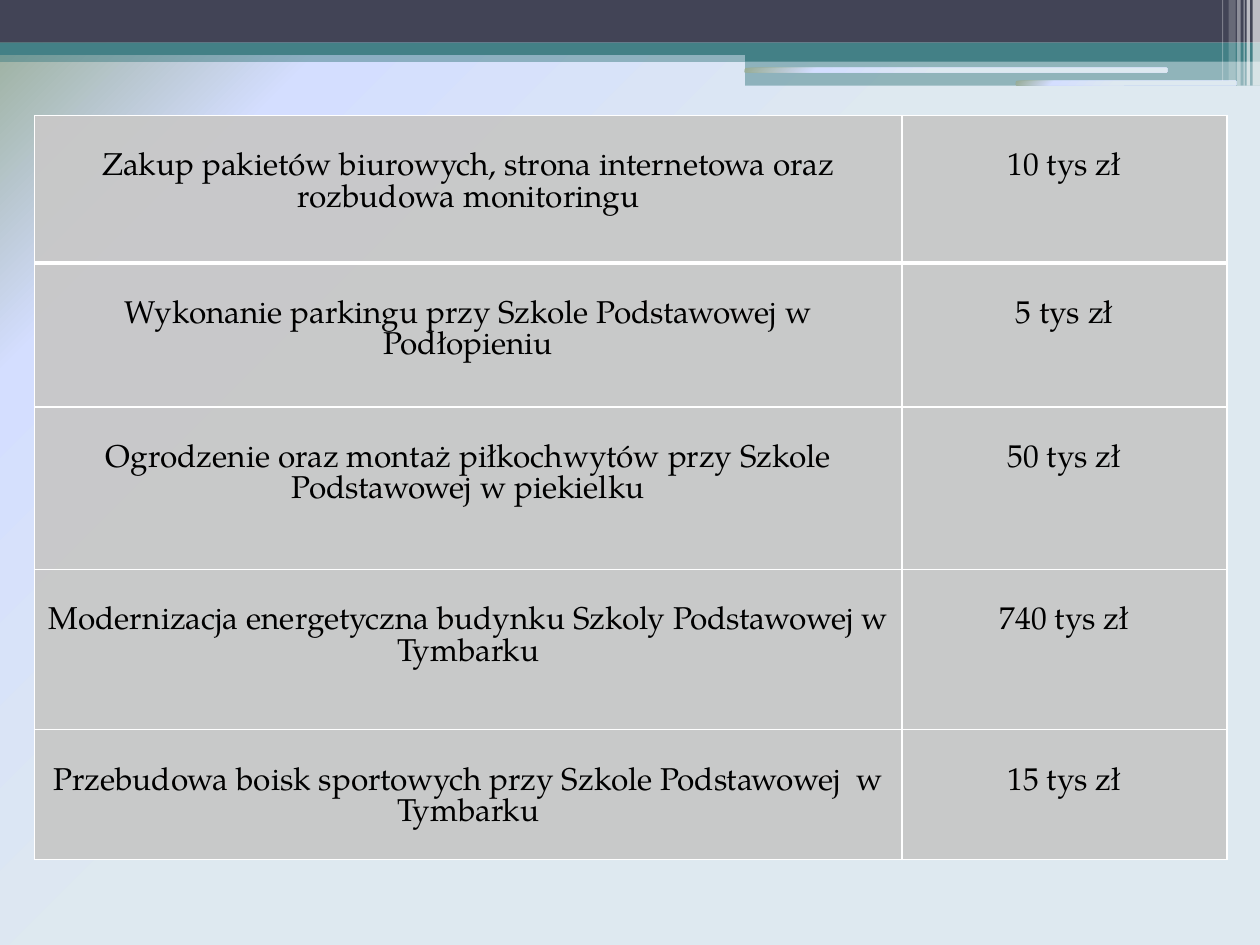
from lxml.etree import SubElement
from pptx import Presentation
from pptx.dml.color import RGBColor
from pptx.enum.shapes import MSO_SHAPE as Shape
from pptx.enum.text import PP_ALIGN as Align
from pptx.oxml import parse_xml
from pptx.oxml.ns import nsdecls, qn
from pptx.util import Cm, Pt

TEAL = RGBColor(0x43, 0x80, 0x86)
NAVY = RGBColor(0x42, 0x44, 0x56)
WHITE = RGBColor(0xFF, 0xFF, 0xFF)
GRAY = RGBColor(0xC8, 0xC8, 0xC8)
BLACK = RGBColor(0, 0, 0)
SKY = RGBColor(0xDE, 0xE9, 0xF0)
LAVENDER = RGBColor(0xD4, 0xDE, 0xFF)
SAGE = RGBColor(0x96, 0xAB, 0x94)
FONT = "TeX Gyre Pagella"

BANDS = [
    (0, 1.02, 25.4, 0.23, TEAL, 50),
    (0, 0, 25.4, 0.86, NAVY, 100),
    (0, 0.86, 25.4, 0.25, TEAL, 100),
    (15.02, 0.99, 10.38, 0.25, TEAL, 100),
    (15.02, 1.23, 10.38, 0.5, TEAL, 50),
]
GROOVES = [(15.01, 1.37, 8.52, 0.09), (20.48, 1.63, 4.44, 0.09)]
STRIPES = [
    (25.25, 0.15, 1.73, 65),
    (25.13, 0.07, 1.73, 65),
    (25.07, 0.02, 1.73, 60),
    (24.94, 0.07, 1.73, 40),
    (24.77, 0.14, 1.63, 20),
    (24.64, 0.02, 1.63, 30),
]
COLUMN_WIDTHS = [17.48, 6.55]
ROWS = [
    (2.97, "Zakup pakietów biurowych, strona internetowa oraz rozbudowa monitoringu", "10 tys zł"),
    (2.9, "Wykonanie parkingu przy Szkole Podstawowej w Podłopieniu", "5 tys zł"),
    (3.28, "Ogrodzenie oraz montaż piłkochwytów przy Szkole Podstawowej w piekielku", "50 tys zł"),
    (3.23, "Modernizacja energetyczna budynku Szkoly Podstawowej w Tymbarku", "740 tys zł"),
    (2.62, "Przebudowa boisk sportowych przy Szkole Podstawowej  w Tymbarku", "15 tys zł"),
]


def set_solid(fill, element, color, opacity):
    """Fill with one colour at the given opacity in percent."""
    fill.solid()
    fill.fore_color.rgb = color
    if opacity < 100:
        tint = element.find(".//" + qn("a:srgbClr"))
        SubElement(tint, qn("a:alpha"), val=str(opacity * 1000))


def set_gradient(fill, element):
    """Fill with the radial gradient that starts at the lower right corner."""
    fill.gradient()
    plain = element.find(".//" + qn("a:gradFill"))
    stops = "".join(
        f'<a:gs pos="{place * 1000}"><a:srgbClr val="{color}"/></a:gs>'
        for place, color in ((53, SKY), (83, LAVENDER), (100, SAGE))
    )
    radial = parse_xml(
        f'<a:gradFill {nsdecls("a")} rotWithShape="1"><a:gsLst>{stops}</a:gsLst>'
        '<a:path path="circle"><a:fillToRect l="100000" t="100000"/></a:path></a:gradFill>'
    )
    plain.getparent().replace(plain, radial)


def add_block(page, kind, left, top, width, height):
    """Add a shape without outline or shadow."""
    block = page.shapes.add_shape(kind, Cm(left), Cm(top), Cm(width), Cm(height))
    block.shadow.inherit = False
    block.line.fill.background()
    return block


def add_bar(page, left, top, width, height, color, opacity):
    """Add a plain rectangle of the header."""
    bar = add_block(page, Shape.RECTANGLE, left, top, width, height)
    set_solid(bar.fill, bar._element.spPr, color, opacity)


def add_groove(page, left, top, width, height):
    """Add a thin rounded line in the background's gradient."""
    groove = add_block(page, Shape.ROUNDED_RECTANGLE, left, top, width, height)
    set_gradient(groove.fill, groove._element.spPr)


def set_borders(cell, top, bottom):
    """Draw white borders with the given top and bottom widths in points."""
    properties = cell._tc.get_or_add_tcPr()
    sides = (("lnL", 1), ("lnR", 1), ("lnT", top), ("lnB", bottom))
    for position, (side, width) in enumerate(sides):
        border = parse_xml(
            f'<a:{side} {nsdecls("a")} w="{Pt(width)}"><a:solidFill>'
            f'<a:srgbClr val="{WHITE}"/></a:solidFill></a:{side}>'
        )
        properties.insert(position, border)


def fill_cell(cell, text, row_number):
    """Write and format one table cell."""
    cell.margin_top = Cm(0.76)
    set_solid(cell.fill, cell._tc.get_or_add_tcPr(), GRAY, 96)
    set_borders(cell, 3 if row_number == 1 else 1, 3 if row_number == 0 else 1)
    cell.text_frame.text = text
    para = cell.text_frame.paragraphs[0]
    para.alignment = Align.CENTER
    para.line_spacing = Pt(18)
    for span in para.runs:
        span.font.name = FONT
        span.font.size = Pt(18)
        span.font.bold = False
        span.font.color.rgb = BLACK


def add_cost_table(page):
    """Add the table of investments and their costs."""
    height = sum(row[0] for row in ROWS)
    frame = page.shapes.add_table(
        len(ROWS), len(COLUMN_WIDTHS), Cm(0.7), Cm(2.33), Cm(sum(COLUMN_WIDTHS)), Cm(height)
    )
    table = frame.table
    table.first_row = table.horz_banding = False
    for column, width in zip(table.columns, COLUMN_WIDTHS):
        column.width = Cm(width)
    for row_number, (row_height, *texts) in enumerate(ROWS):
        table.rows[row_number].height = Cm(row_height)
        for column_number, text in enumerate(texts):
            fill_cell(table.cell(row_number, column_number), text, row_number)


def main():
    """Build the slide and save it."""
    deck = Presentation()
    deck.slide_width, deck.slide_height = Cm(25.4), Cm(19.05)
    page = deck.slides.add_slide(deck.slide_layouts[6])
    set_gradient(page.background.fill, page._element)
    for band in BANDS:
        add_bar(page, *band)
    for groove in GROOVES:
        add_groove(page, *groove)
    for left, width, height, opacity in STRIPES:
        add_bar(page, left, 0, width, height, WHITE, opacity)
    add_cost_table(page)
    deck.save("out.pptx")


if __name__ == "__main__":
    main()
